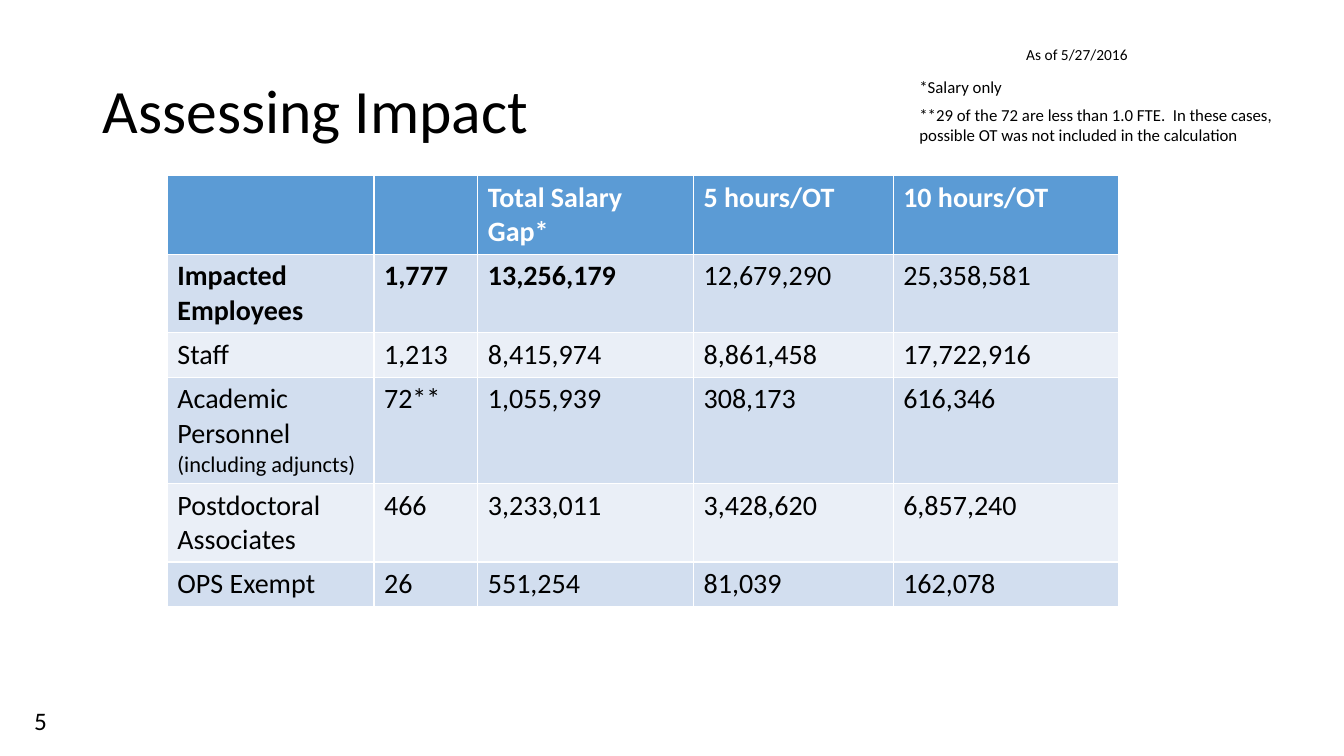
from pptx import Presentation
from pptx.dml.color import RGBColor
from pptx.enum.text import MSO_ANCHOR as Anchor, MSO_AUTO_SIZE as Fit, PP_ALIGN as Align
from pptx.util import Inches, Pt


def color(code):
    return RGBColor.from_string(code)


def write(para, text, size=20, bold=False, ink="000000"):
    run = para.add_run()
    run.text = text
    font = run.font
    font.name, font.size, font.bold = "Calibri", Pt(size), bold
    font.color.rgb = color(ink)


deck = Presentation()
deck.slide_width, deck.slide_height = Inches(13.33), Inches(7.5)
slide = deck.slides.add_slide(deck.slide_layouts[5])

# Title
title = slide.shapes.title
title.left, title.top = Inches(0.92), Inches(0.4)
title.width, title.height = Inches(11.5), Inches(1.45)
frame = title.text_frame
frame.auto_size, frame.vertical_anchor = Fit.NONE, Anchor.MIDDLE
para = frame.paragraphs[0]
para.alignment, para.line_spacing = Align.LEFT, 0.9
write(para, "Assessing Impact", size=44)

# Impact table
rows = [
    ["", "", "Total Salary Gap*", "5 hours/OT", "10 hours/OT"],
    ["Impacted Employees", "1,777", "13,256,179", "12,679,290", "25,358,581"],
    ["Staff", "1,213", "8,415,974", "8,861,458", "17,722,916"],
    ["Academic Personnel ", "72**", "1,055,939", "308,173", "616,346"],
    ["Postdoctoral Associates", "466", "3,233,011", "3,428,620", "6,857,240"],
    ["OPS Exempt", "26", "551,254", "81,039", "162,078"],
]
widths = [2.05, 1.03, 2.14, 1.98, 2.24]
high = 0.41
table = slide.shapes.add_table(
    len(rows), len(widths), Inches(1.66), Inches(1.74),
    Inches(sum(widths)), Inches(high * len(rows))).table
for col, width in zip(table.columns, widths):
    col.width = Inches(width)
for r, row in enumerate(rows):
    table.rows[r].height = Inches(high)
    head = r == 0
    fill = "5B9BD5" if head else ("EAEFF7", "D2DEEF")[r % 2]
    for c, text in enumerate(row):
        cell = table.cell(r, c)
        cell.fill.solid()
        cell.fill.fore_color.rgb = color(fill)
        if text:
            write(cell.text_frame.paragraphs[0], text,
                  bold=head or (r == 1 and c < 3),
                  ink="FFFFFF" if head else "000000")
write(table.cell(3, 0).text_frame.paragraphs[0], "(including adjuncts)", size=16)

# Date, footnotes and page number
notes = [
    (10.08, 0.4, 2.24, 0.29, 11, "As of 5/27/2016"),
    (9.02, 0.99, 3.78, 0.5, 12,
     "**29 of the 72 are less than 1.0 FTE.  In these cases, "
     "possible OT was not included in the calculation"),
    (9.02, 0.71, 2.88, 0.3, 12, "*Salary only"),
    (0.24, 6.95, 0.51, 0.4, 18, "5"),
]
for left, top, width, height, size, text in notes:
    box = slide.shapes.add_textbox(*map(Inches, (left, top, width, height)))
    box.text_frame.word_wrap = True
    box.text_frame.auto_size = Fit.SHAPE_TO_FIT_TEXT
    write(box.text_frame.paragraphs[0], text, size=size)

deck.save("out.pptx")
